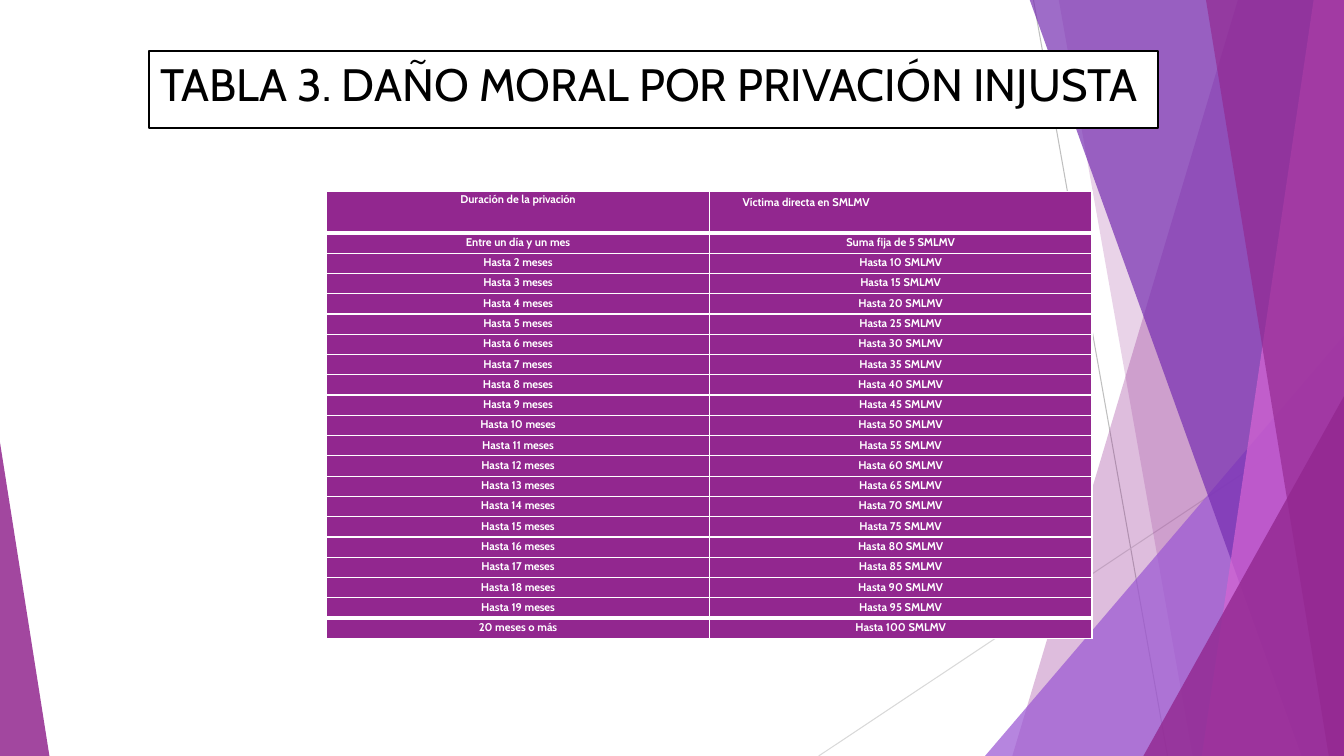
import pptx
import pptx.dml.color
import pptx.enum.shapes
import pptx.enum.text
import pptx.oxml.ns
import pptx.util
from lxml import etree

Inches = pptx.util.Inches
Pt = pptx.util.Pt
SHAPES = pptx.enum.shapes.MSO_SHAPE
ALIGN = pptx.enum.text.PP_ALIGN
qn = pptx.oxml.ns.qn

FONT = "Cabin"
WHITE = "FFFFFF"
BLACK = "000000"
PURPLE = "92278F"
WIDTH, HEIGHT = 13.33, 7.5

ROWS = [
    (("Duración de la ", "privación"), ("Víctima directa en ", "SMLMV")),
    (("Entre un día y un ", "mes"), ("Suma fija de 5 ", "SMLMV")),
    *(
        ((f"Hasta {months} ", "meses"), (f"Hasta {months * 5} ", "SMLMV"))
        for months in range(2, 20)
    ),
    (("20 meses o ", "más"), ("Hasta 100 ", "SMLMV")),
]


def color(value):
    """Return the colour for a hex string."""
    return pptx.dml.color.RGBColor.from_string(value)


def fill_facet(shape, value, opacity):
    """Give a facet a translucent fill and no outline."""
    shape.shadow.inherit = False
    shape.fill.solid()
    shape.fill.fore_color.rgb = color(value)
    shape.line.fill.background()
    solid = shape._element.spPr.find(qn("a:solidFill"))
    etree.SubElement(solid[0], qn("a:alpha")).set("val", str(opacity * 1000))


def add_ray(slide, start, end, value):
    """Draw a thin background line."""
    ray = slide.shapes.add_connector(
        pptx.enum.shapes.MSO_CONNECTOR.STRAIGHT,
        *(Inches(length) for length in start + end),
    )
    ray.line.color.rgb = color(value)
    ray.line.width = Pt(0.75)
    etree.SubElement(ray._element.spPr, qn("a:effectLst"))


def add_band(slide, top_left, bottom_left, value, opacity):
    """Draw a slanted band reaching the right edge of the slide."""
    top = -0.01
    corners = [(top_left, top), (WIDTH, top), (WIDTH, HEIGHT), (bottom_left, HEIGHT)]
    points = [(Inches(x), Inches(y)) for x, y in corners]
    builder = slide.shapes.build_freeform(*points[0])
    builder.add_line_segments(points[1:], close=True)
    fill_facet(builder.convert_to_shape(), value, opacity)


def add_corner(slide, left, top, width, apex, value, opacity):
    """Draw a right triangle standing on the bottom edge of the slide."""
    corner = slide.shapes.add_shape(
        SHAPES.ISOSCELES_TRIANGLE,
        Inches(left), Inches(top), Inches(width), Inches(HEIGHT - top),
    )
    corner.adjustments[0] = apex
    fill_facet(corner, value, opacity)


def add_background(slide):
    """Draw the faceted decoration from back to front."""
    add_ray(slide, (10.25, 0), (11.58, HEIGHT), "BFBFBF")
    add_ray(slide, (WIDTH, 4.03), (8.12, HEIGHT), "D9D9D9")
    add_band(slide, 12.28, 10.04, PURPLE, 30)
    add_band(slide, 10.5, 11.83, PURPLE, 20)
    add_corner(slide, 9.77, 3.33, 3.56, 1, "9B57D3", 72)
    add_band(slide, 10.21, 12.91, "762EB1", 70)
    add_band(slide, 13.03, 11.92, "D665D3", 70)
    add_band(slide, 11.96, 13.18, PURPLE, 65)
    add_corner(slide, 11.34, 3.93, 1.99, 1, PURPLE, 80)
    add_corner(slide, 0, 4.39, 0.49, 0, PURPLE, 85)


def add_run(paragraph, text, size, value, bold=False):
    """Append a styled run and return it."""
    run = paragraph.add_run()
    run.text = text
    run.font.name = FONT
    run.font.size = Pt(size)
    run.font.bold = bold
    run.font.color.rgb = color(value)
    return run


def add_title(slide, left, top, width, height):
    """Draw the framed title."""
    title = slide.shapes.add_shape(
        SHAPES.RECTANGLE, Inches(left), Inches(top), Inches(width), Inches(height)
    )
    title.shadow.inherit = False
    title.fill.solid()
    title.fill.fore_color.rgb = color(WHITE)
    title.line.color.rgb = color(BLACK)
    title.line.width = Pt(1.5)
    frame = title.text_frame
    frame.word_wrap = True
    frame.vertical_anchor = pptx.enum.text.MSO_ANCHOR.TOP
    paragraph = frame.paragraphs[0]
    paragraph.alignment = ALIGN.CENTER
    add_run(paragraph, "TABLA 3. DAÑO MORAL POR PRIVACIÓN INJUSTA ", 32.4, BLACK)


def set_borders(cell, top, bottom):
    """Draw white cell borders with the given top and bottom widths."""
    properties = cell._tc.get_or_add_tcPr()
    for side, width in (("L", 1), ("R", 1), ("T", top), ("B", bottom)):
        line = etree.SubElement(properties, qn(f"a:ln{side}"))
        line.set("w", str(Pt(width)))
        solid = etree.SubElement(line, qn("a:solidFill"))
        etree.SubElement(solid, qn("a:srgbClr")).set("val", WHITE)


def fill_cell(cell, texts, top, bottom):
    """Write a cell as two runs, the last one slightly condensed."""
    cell.margin_left = cell.margin_right = cell.margin_top = cell.margin_bottom = 0
    set_borders(cell, top, bottom)
    cell.fill.solid()
    cell.fill.fore_color.rgb = color(PURPLE)
    paragraph = cell.text_frame.paragraphs[0]
    paragraph.alignment = ALIGN.CENTER
    paragraph.line_spacing = Pt(11.7)
    paragraph.space_after = Pt(8)
    for text, spacing in zip(texts, (0, -10)):
        run = add_run(paragraph, text, 8, WHITE, True)
        run._r.get_or_add_rPr().set("spc", str(spacing))


def style_header(table):
    """Apply the paragraph settings of the two header cells."""
    duration, victim = (cell.text_frame.paragraphs[0] for cell in table.rows[0].cells)
    duration.line_spacing = 1.07
    duration.space_before = Pt(6.3)
    victim.alignment = ALIGN.LEFT
    victim.line_spacing = Pt(12.6)
    properties = victim._p.get_or_add_pPr()
    properties.set("marL", str(Inches(0.71)))
    properties.set("indent", str(Inches(-0.38)))


def add_damages_table(slide, left, top, width, height):
    """Draw the table of durations and compensation."""
    header_height = 0.41
    row_height = (height - header_height) / (len(ROWS) - 1)
    table = slide.shapes.add_table(
        len(ROWS), 2, Inches(left), Inches(top), Inches(width), Inches(height)
    ).table
    table.horz_banding = False
    last = len(ROWS) - 1
    for index, texts in enumerate(ROWS):
        table.rows[index].height = Inches(row_height if index else header_height)
        top_width = 3 if index in (1, last) else 1
        bottom_width = 3 if index in (0, last - 1) else 1
        for cell, cell_texts in zip(table.rows[index].cells, texts):
            fill_cell(cell, cell_texts, top_width, bottom_width)
    style_header(table)


def main():
    """Build and save the presentation."""
    presentation = pptx.Presentation()
    presentation.slide_width = Inches(WIDTH)
    presentation.slide_height = Inches(HEIGHT)
    slide = presentation.slides.add_slide(presentation.slide_layouts[6])
    add_background(slide)
    add_title(slide, 1.48, 0.51, 10.01, 0.76)
    add_damages_table(slide, 3.24, 1.9, 7.59, 4.44)
    presentation.save("out.pptx")


if __name__ == "__main__":
    main()
